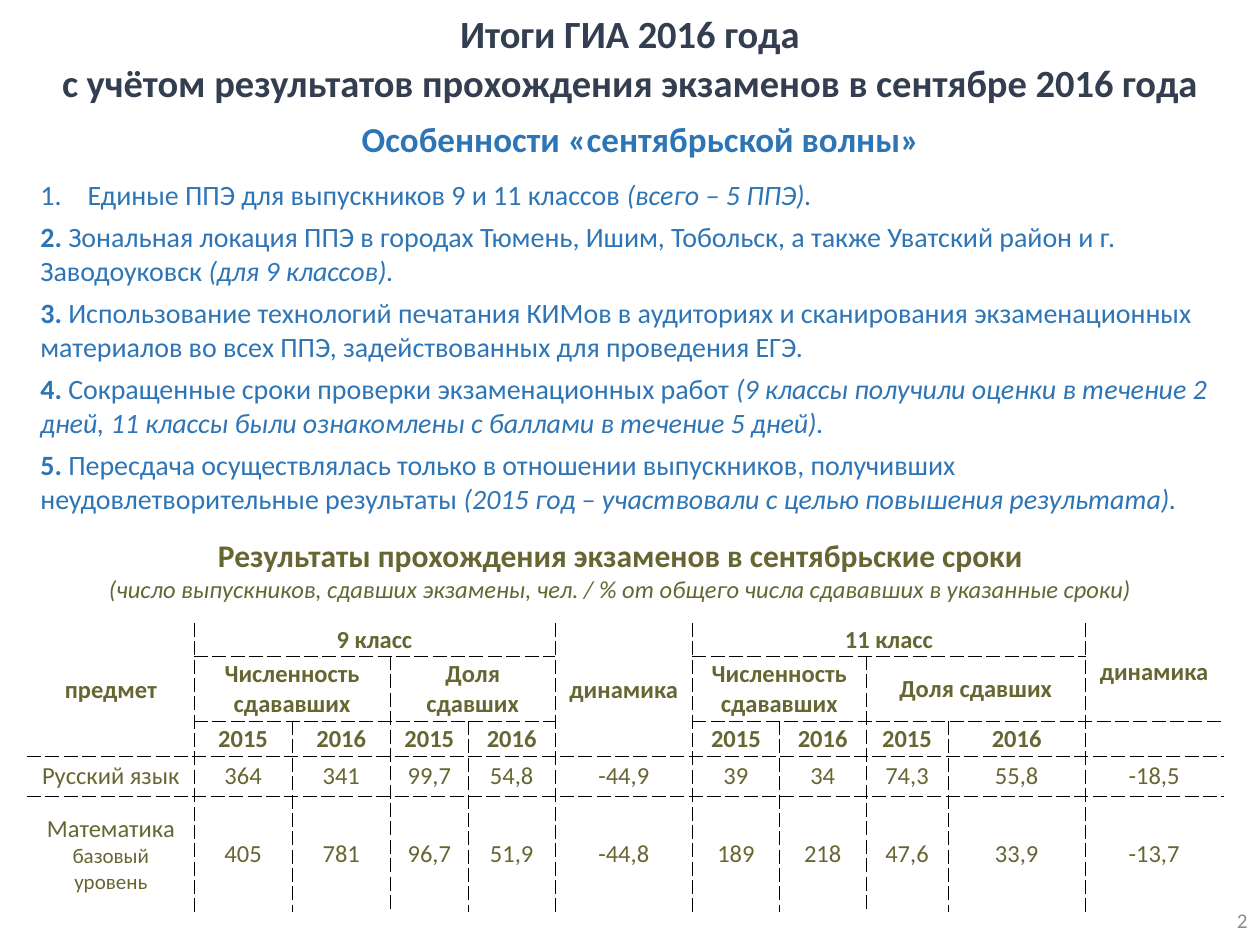
import pptx
import pptx.dml.color
import pptx.enum.shapes
import pptx.enum.text
import pptx.oxml
import pptx.oxml.ns
import pptx.util

Cm = pptx.util.Cm
Align = pptx.enum.text.PP_ALIGN
Anchor = pptx.enum.text.MSO_ANCHOR


class Theme:
    font = "Calibri"
    dark, blue, olive = "333F50", "2E75B6", "666633"
    gray, white, black = "8C8C8C", "FFFFFF", "000000"
    title, head, sub, body, cell, small = 22, 20, 18, 16, 14, 12
    gap = 5


def write(para, text, size, color, bold=False, italic=False, align=None):
    run = para.add_run()
    run.text = text
    run.font.name = Theme.font
    run.font.size = pptx.util.Pt(size)
    run.font.bold = bold
    run.font.italic = italic
    run.font.color.rgb = pptx.dml.color.RGBColor.from_string(color)
    if align is not None:
        para.alignment = align


def place(shape, left, top, width, height, anchor=Anchor.TOP):
    shape.left, shape.top = Cm(left), Cm(top)
    shape.width, shape.height = Cm(width), Cm(height)
    frame = shape.text_frame
    frame.word_wrap = True
    frame.auto_size = pptx.enum.text.MSO_AUTO_SIZE.NONE
    frame.vertical_anchor = anchor
    return frame


deck = pptx.Presentation()
deck.slide_width, deck.slide_height = Cm(25.4), Cm(19.05)
slide = deck.slides.add_slide(deck.slide_layouts[1])
shapes = slide.shapes

lines = ["Итоги ГИА 2016 года",
         "с учётом результатов прохождения экзаменов в сентябре 2016 года"]
frame = place(shapes.title, 0, 0, 25.4, 2.24)
for i, line in enumerate(lines):
    para = frame.add_paragraph() if i else frame.paragraphs[0]
    para.line_spacing = 1.07
    write(para, line, Theme.title, Theme.dark, bold=True, align=Align.CENTER)

items = [
    ("", "Единые ППЭ для выпускников 9 и 11 классов ", "(всего – 5 ППЭ)."),
    ("2. ", "Зональная локация ППЭ в городах Тюмень, Ишим, Тобольск, а также "
     "Уватский район и г. Заводоуковск ", "(для 9 классов)."),
    ("3. ", "Использование технологий печатания КИМов в аудиториях и сканирования "
     "экзаменационных материалов во всех ППЭ, задействованных для проведения ЕГЭ.", ""),
    ("4. ", "Сокращенные сроки проверки экзаменационных работ ",
     "(9 классы получили оценки в течение 2 дней, 11 классы были ознакомлены "
     "с баллами в течение 5 дней)."),
    ("5. ", "Пересдача осуществлялась только в отношении выпускников, получивших "
     "неудовлетворительные результаты ",
     "(2015 год – участвовали с целью повышения результата)."),
]
frame = place(slide.placeholders[1], 0.56, 3.45, 24.61, 7.09)
for i, (mark, text, note) in enumerate(items):
    para = frame.add_paragraph() if i else frame.paragraphs[0]
    para.space_before = pptx.util.Pt(Theme.gap if i else 0)
    props = para._p.get_or_add_pPr()
    indent = 0 if mark else Cm(0.95)
    props.set("marL", str(indent))
    props.set("indent", str(-indent))
    bullet = "<a:buNone %s/>" if mark else '<a:buAutoNum %s type="arabicPeriod"/>'
    props.append(pptx.oxml.parse_xml(bullet % pptx.oxml.ns.nsdecls("a")))
    for part, look in ((mark, {"bold": True}), (text, {}), (note, {"italic": True})):
        if part:
            write(para, part, Theme.body, Theme.blue, **look)

heads = [
    ((0.48, 2.24, 18.31, 1.12), Align.RIGHT, Theme.blue,
     [("Особенности «сентябрьской волны»", Theme.head, {"bold": True})]),
    ((0.33, 10.69, 24.36, 1.63), Align.CENTER, Theme.olive,
     [("Результаты прохождения экзаменов в сентябрьские сроки", Theme.sub, {"bold": True}),
      ("(число выпускников, сдавших экзамены, чел. / % от общего числа сдававших "
       "в указанные сроки)", Theme.cell, {"italic": True})]),
]
for spot, align, color, rows in heads:
    rect = shapes.add_shape(pptx.enum.shapes.MSO_SHAPE.RECTANGLE, 0, 0, 0, 0)
    rect.shadow.inherit = False
    rect.fill.solid()
    rect.fill.fore_color.rgb = pptx.dml.color.RGBColor.from_string(Theme.white)
    rect.line.fill.background()
    frame = place(rect, *spot)
    for i, (text, size, look) in enumerate(rows):
        para = frame.add_paragraph() if i else frame.paragraphs[0]
        write(para, text, size, color, align=align, **look)

page = place(shapes.add_textbox(0, 0, 0, 0), 19.69, 18.03, 5.71, 1.02, Anchor.MIDDLE)
write(page.paragraphs[0], "2", Theme.small, Theme.gray, align=Align.RIGHT)

years = ["2015", "2016"] * 2
count, share = "Численность сдававших", "Доля сдавших"
data = [
    ["предмет", "9 класс", "", "", "", "динамика", "11 класс", "", "", "", "динамика"],
    ["", count, "", share, "", "", count, "", share, "", ""],
    ["", *years, "", *years, ""],
    ["Русский язык", "364", "341", "99,7", "54,8", "-44,9",
     "39", "34", "74,3", "55,8", "-18,5"],
    ["Математика ", "405", "781", "96,7", "51,9", "-44,8",
     "189", "218", "47,6", "33,9", "-13,7"],
]
wide = [3.35, 1.98, 1.98, 1.57, 1.75, 2.77, 1.75, 1.75, 1.65, 2.77, 2.77]
high = [0.66, 1.31, 0.66, 0.79, 2.36]
spans = [(0, 0, 2, 0), (0, 5, 2, 5), (0, 10, 1, 10), (0, 1, 0, 4), (0, 6, 0, 9)]
spans += [(1, col, 1, col + 1) for col in (1, 3, 6, 8)]

table = shapes.add_table(len(high), len(wide), Cm(0.56), Cm(12.57),
                         Cm(sum(wide)), Cm(sum(high))).table
table.first_row = table.horz_banding = False
for col, width in zip(table.columns, wide):
    col.width = Cm(width)
for row, height in zip(table.rows, high):
    row.height = Cm(height)
for top, left, low, right in spans:
    table.cell(top, left).merge(table.cell(low, right))

edge = ('<a:ln{} {} w="3175"><a:solidFill><a:srgbClr val="{}"/></a:solidFill>'
        '<a:prstDash val="sysDash"/></a:ln{}>')
for r, texts in enumerate(data):
    for c, text in enumerate(texts):
        cell = table.cell(r, c)
        cell.margin_left = cell.margin_right = Cm(0.18)
        cell.margin_top = cell.margin_bottom = 0
        cell.vertical_anchor = Anchor.MIDDLE
        write(cell.text_frame.paragraphs[0], text, Theme.cell, Theme.olive,
              bold=r < 3, align=Align.CENTER)
        inner = {"L": c > 0, "R": c < len(wide) - 1, "T": r > 0, "B": r < len(high) - 1}
        for side, shown in inner.items():
            if shown:
                code = edge.format(side, pptx.oxml.ns.nsdecls("a"), Theme.black, side)
                cell._tc.get_or_add_tcPr().append(pptx.oxml.parse_xml(code))
        cell.fill.background()
write(table.cell(4, 0).text_frame.paragraphs[0], "базовый уровень", Theme.small, Theme.olive)

deck.save("out.pptx")
